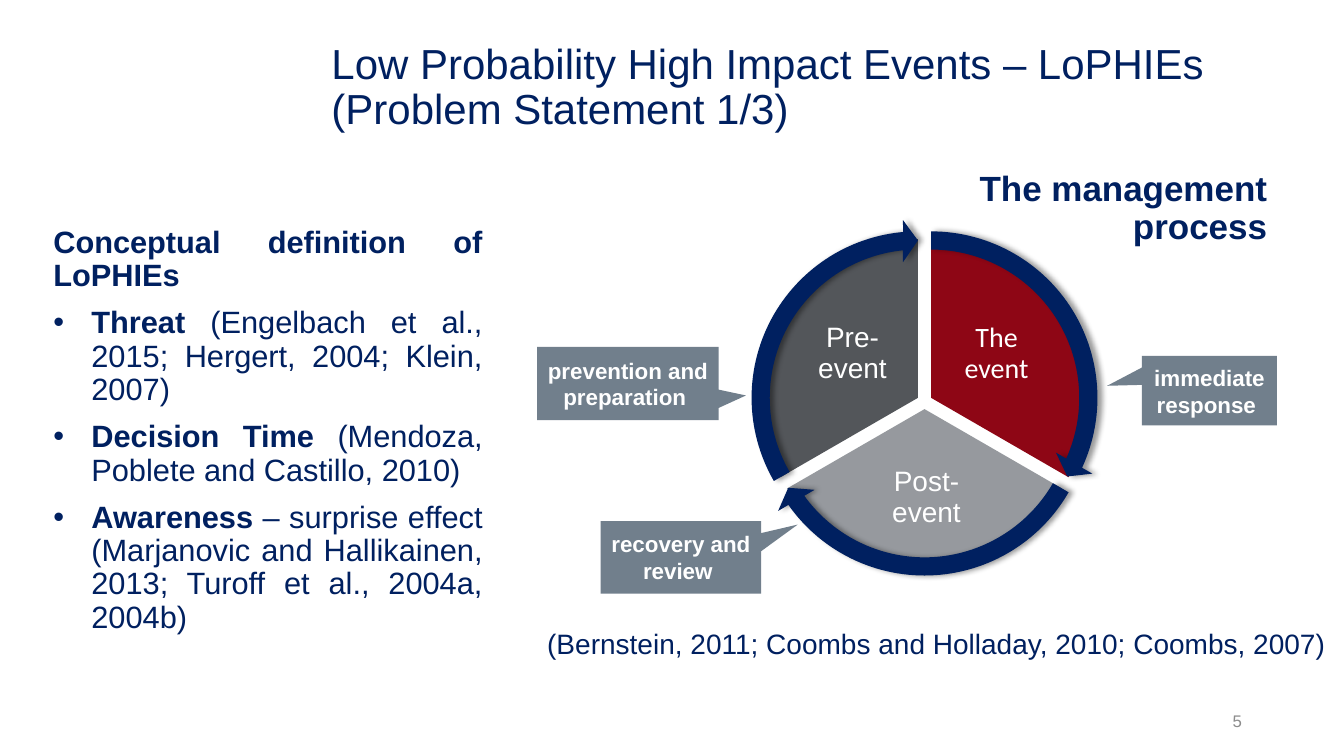
"""Build the slide on low probability high impact events and their management cycle."""
from math import cos, radians, sin

from lxml import etree
from pptx import Presentation
from pptx.dml.color import RGBColor
from pptx.enum.shapes import MSO_SHAPE
from pptx.enum.text import MSO_ANCHOR, MSO_AUTO_SIZE, PP_ALIGN
from pptx.oxml.ns import qn
from pptx.util import Cm, Pt

LEFT, CENTER, RIGHT, JUSTIFY = PP_ALIGN.LEFT, PP_ALIGN.CENTER, PP_ALIGN.RIGHT, PP_ALIGN.JUSTIFY
TOP, MIDDLE = MSO_ANCHOR.TOP, MSO_ANCHOR.MIDDLE
NO_AUTOFIT = MSO_AUTO_SIZE.NONE
PIE, ARROW, CALLOUT = MSO_SHAPE.PIE, MSO_SHAPE.CIRCULAR_ARROW, MSO_SHAPE.RECTANGULAR_CALLOUT

NAVY, WHITE, SLATE, GREY = "002060", "FFFFFF", "717F8C", "8C8C8C"

TITLE = "Low Probability High Impact Events – LoPHIEs\v(Problem Statement 1/3)"
DEFINITION = [
    [("Conceptual definition of LoPHIEs", True)],
    [("Threat", True), (" (Engelbach et al., 2015; Hergert, 2004; Klein, 2007)", False)],
    [("Decision Time ", True), ("(Mendoza, Poblete and Castillo, 2010)", False)],
    [("Awareness", True),
     (" – surprise effect (Marjanovic and Hallikainen, 2013; Turoff et al., 2004a, 2004b)", False)],
]
TEXTS = [
    ("5", (28.88, 17.65, 2.67, 1.02), RIGHT, MIDDLE, 1.0, {"size": Pt(12), "color": GREY}),
    ("The management process", (24.36, 4.19, 7.82, 2.16), RIGHT, MIDDLE, 0.9,
     {"size": Pt(25), "bold": True, "color": NAVY}),
    ("(Bernstein, 2011; Coombs and Holladay, 2010; Coombs, 2007)", (13.54, 15.67, 20.32, 1.12),
     LEFT, TOP, 1.0, {"size": Pt(20), "color": NAVY}),
]
CALLOUTS = [
    ("recovery and review ", (15.14, 13.13, 4.04, 1.83), (0.729, -0.451)),
    ("immediate response ", (28.78, 8.97, 3.4, 1.75), (-0.758, -0.07)),
    ("prevention and preparation ", (13.54, 8.74, 4.57, 1.85), (0.651, 0.163)),
]
PHASES = [
    ("The event", "8E0615", "Calibri", (24.1, 8.08, 2.03, 1.68)),
    ("Post-event", "96999E", "Arial", (21.84, 11.81, 3.02, 1.47)),
    ("Pre-event", "53565A", "Arial", (20.47, 8.08, 2.03, 1.68)),
]
CYCLE_CENTER = (23.3, 10.12)
PIE_SIZE, ARROW_SIZE, PHASE_OFFSET = 8, 8.99, 0.19
FIRST_ANGLE, PHASE_ANGLE = 270, 120
ANGLE_UNIT = 0.6
ARROW_THICKNESS, ARROW_HEAD_ANGLE, ARROW_HEAD_WIDTH = 0.051, 3.275, 0.059


def color(value):
    return RGBColor.from_string(value)


def lengths(place):
    return [Cm(value) for value in place]


def style(span, font_format):
    for name, value in {"name": "Arial", **font_format}.items():
        if name == "color":
            span.font.color.rgb = color(value)
        else:
            setattr(span.font, name, value)


def set_frame(box, anchor, inset=None):
    frame = box.text_frame
    frame.word_wrap = True
    frame.auto_size = NO_AUTOFIT
    frame.vertical_anchor = anchor
    if inset is not None:
        for side in ("left", "right", "top", "bottom"):
            setattr(frame, f"margin_{side}", Cm(inset))
    return frame


def write(box, text, align, anchor, spacing, font_format, inset=None):
    para = set_frame(box, anchor, inset).paragraphs[0]
    para.alignment = align
    para.line_spacing = spacing
    para.space_before = Pt(0)
    para.text = text
    for span in para.runs:
        style(span, font_format)


def add_shape(page, kind, place, fill, adjustments):
    shape = page.shapes.add_shape(kind, *lengths(place))
    shape.shadow.inherit = False
    shape.fill.solid()
    shape.fill.fore_color.rgb = color(fill)
    shape.line.fill.background()
    for index, value in enumerate(adjustments):
        shape.adjustments[index] = value
    return shape


def add_shadow(shape):
    effects = shape._element.spPr.find(qn("a:effectLst"))
    shadow = etree.SubElement(effects, qn("a:outerShdw"), blurRad=str(Pt(4)), dist=str(Pt(3)),
                              dir="0", algn="ctr", rotWithShape="0")
    tint = etree.SubElement(shadow, qn("a:srgbClr"), val="000000")
    etree.SubElement(tint, qn("a:alpha"), val="40000")


def place_placeholder(box, place):
    box.left, box.top, box.width, box.height = lengths(place)


def fill_definition(body):
    place_placeholder(body, (1.09, 5.59, 11.33, 10.26))
    frame = set_frame(body, TOP)
    for index, parts in enumerate(DEFINITION):
        para = frame.paragraphs[0] if index == 0 else frame.add_paragraph()
        para.alignment = JUSTIFY
        para.line_spacing = 0.9
        para.space_before = Pt(10 if index else 0)
        indent = Cm(0.96) if index else 0
        properties = para._p.get_or_add_pPr()
        properties.set("marL", str(indent))
        properties.set("indent", str(-indent))
        if index:
            etree.SubElement(properties, qn("a:buChar"), char="•")
        else:
            etree.SubElement(properties, qn("a:buNone"))
        for text, bold in parts:
            span = para.add_run()
            span.text = text
            style(span, {"size": Pt(22), "bold": bold, "color": NAVY})


def add_cycle(page):
    arrows = []
    for index, (label, fill, font, label_place) in enumerate(PHASES):
        start = FIRST_ANGLE + PHASE_ANGLE * index
        middle = radians(start + PHASE_ANGLE / 2)
        center_x = CYCLE_CENTER[0] + PHASE_OFFSET * cos(middle)
        center_y = CYCLE_CENTER[1] + PHASE_OFFSET * sin(middle)
        first = start % 360 * ANGLE_UNIT
        last = (start + PHASE_ANGLE) % 360 * ANGLE_UNIT
        pie_place, arrow_place = [(center_x - size / 2, center_y - size / 2, size, size)
                                  for size in (PIE_SIZE, ARROW_SIZE)]
        add_shape(page, PIE, pie_place, fill, (first, last))
        box = page.shapes.add_textbox(*lengths(label_place))
        write(box, label, CENTER, MIDDLE, 0.9,
              {"name": font, "size": Pt(20), "color": WHITE}, inset=0.07)
        arrows.append((arrow_place, (ARROW_THICKNESS, ARROW_HEAD_ANGLE, last - ARROW_HEAD_ANGLE,
                                     first, ARROW_HEAD_WIDTH)))
    for place, adjustments in arrows:
        add_shadow(add_shape(page, ARROW, place, NAVY, adjustments))


def main():
    deck = Presentation()
    deck.slide_width, deck.slide_height = Cm(33.87), Cm(19.05)
    page = deck.slides.add_slide(deck.slide_layouts[1])

    title = page.shapes.title
    place_placeholder(title, (8.1, 0.38, 25.76, 3.68))
    write(title, TITLE, LEFT, MIDDLE, 0.9, {"size": Pt(30), "color": NAVY})
    fill_definition(page.placeholders[1])

    for text, place, align, anchor, spacing, font_format in TEXTS:
        box = page.shapes.add_textbox(*lengths(place))
        write(box, text, align, anchor, spacing, font_format)
    for text, place, pointer in CALLOUTS:
        callout = add_shape(page, CALLOUT, place, SLATE, pointer)
        write(callout, text, CENTER, MIDDLE, 1.0,
              {"size": Pt(16), "bold": True, "color": WHITE})
    add_cycle(page)

    deck.save("out.pptx")


if __name__ == "__main__":
    main()
